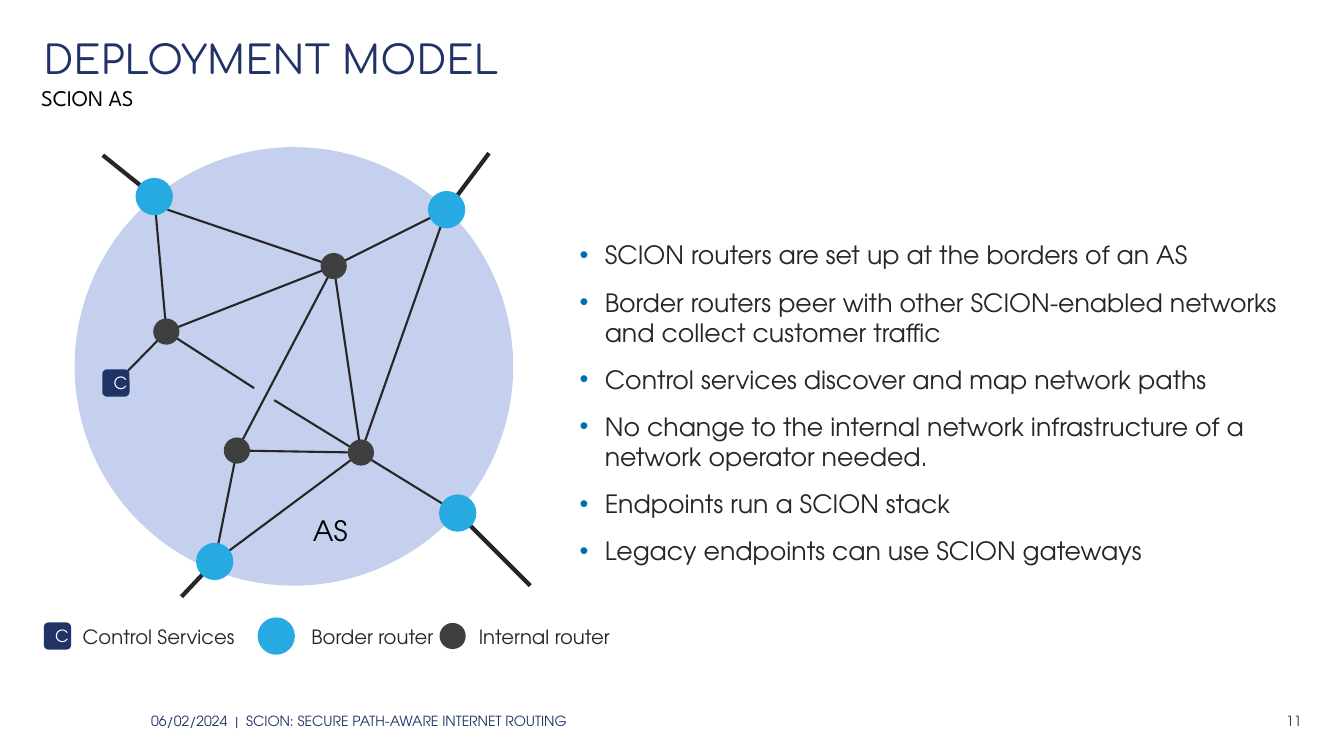
from dataclasses import dataclass

from lxml import etree
from pptx import Presentation
from pptx import util as u
from pptx.dml.color import RGBColor
from pptx.enum import shapes, text
from pptx.oxml.ns import qn


@dataclass(frozen=True)
class Theme:
    navy: str = "203367"
    sky: str = "27A9E1"
    dark: str = "3F3F3F"
    pale: str = "C4D0ED"
    ink: str = "262626"
    black: str = "000000"
    white: str = "FFFFFF"
    dot: str = "006EB7"
    body: str = "TeX Gyre Adventor"
    head: str = "Comfortaa"
    sub: str = "League Spartan"
    title: int = 28
    area: int = 20
    list: int = 18
    lead: int = 16
    key: int = 14
    mark: int = 12
    foot: int = 10


T = Theme()
ALIGN = text.PP_ALIGN
ANCHOR = text.MSO_ANCHOR
SIZES = {"border": 0.37, "inner": 0.26, "control": 0.27}

# Centres, measured from the top left corner of the network's box
NODES = {
    "left": ("inner", 0.91, 1.83),
    "top": ("inner", 2.57, 1.18),
    "low": ("inner", 1.61, 3.01),
    "right": ("inner", 2.84, 3.03),
    "nw": ("border", 0.79, 0.49),
    "ne": ("border", 3.69, 0.62),
    "se": ("border", 3.8, 3.63),
    "sw": ("border", 1.39, 4.11),
    "ctrl": ("control", 0.41, 2.34),
}
# An end is a node's name or a point
LINKS = [
    ("left", (1.78, 2.39)), ((1.98, 2.51), "se"),
    ("ne", "right"), ("ne", "top"), ("top", "left"),
    ("top", (0.92, 0.62)), ("left", "nw"), ("top", "low"),
    ("right", "low"), ("right", "sw"), ("sw", "low"),
    ("ctrl", "left"), ("top", "right"),
]
SPOKES = [
    ("nw", (0.28, 0.08)), ("ne", (4.11, 0.06)),
    ("se", (4.52, 4.35)), ("sw", (1.06, 4.46)),
]
KEYS = [
    ("control", 0.14, 0.29, "Control Services"),
    ("border", 2.31, 2.56, "Border router"),
    ("inner", 4.06, 4.22, "Internal router"),
]
POINTS = [
    "SCION routers are set up at the borders of an AS",
    "Border routers peer with other SCION-enabled networks and collect customer traffic",
    "Control services discover and map network paths",
    "No change to the internal network infrastructure of a network operator needed.",
    "Endpoints run a SCION stack",
    "Legacy endpoints can use SCION gateways",
]


def rgb(code):
    return RGBColor.from_string(code)


def style(para, size, color, face=T.body, align=ALIGN.LEFT):
    para.alignment = align
    font = para.font
    font.size, font.name = u.Pt(size), face
    font.color.rgb = rgb(color)


def inset(frame, side, top):
    frame.margin_left = frame.margin_right = u.Inches(side)
    frame.margin_top = frame.margin_bottom = u.Inches(top)


def label(slide, box, words, size, color, face=T.body, align=ALIGN.LEFT):
    frame = slide.shapes.add_textbox(*map(u.Inches, box)).text_frame
    frame.word_wrap = True
    frame.text = words
    style(frame.paragraphs[0], size, color, face, align)
    return frame


def solid(slide, kind, box, color):
    shape = slide.shapes.add_shape(kind, *map(u.Inches, box))
    shape.shadow.inherit = False
    shape.fill.solid()
    shape.fill.fore_color.rgb = rgb(color)
    shape.line.fill.background()
    return shape


def node(slide, kind, x, y):
    """Draw a router or control service centred on x, y."""
    size = SIZES[kind]
    box = (x - size / 2, y - size / 2, size, size)
    if kind != "control":
        color = T.sky if kind == "border" else T.dark
        solid(slide, shapes.MSO_SHAPE.OVAL, box, color)
        return
    shape = solid(slide, shapes.MSO_SHAPE.ROUNDED_RECTANGLE, box, T.navy)
    frame = shape.text_frame
    frame.text = "C"
    frame.vertical_anchor = ANCHOR.MIDDLE
    style(frame.paragraphs[0], T.mark, T.white, align=ALIGN.CENTER)


def link(slide, start, end, width):
    line = slide.shapes.add_connector(
        shapes.MSO_CONNECTOR.STRAIGHT, *map(u.Inches, (*start, *end)))
    line.line.color.rgb = rgb(T.ink)
    line.line.width = u.Pt(width)
    etree.SubElement(line._element.spPr, qn("a:effectLst"))


def header(slide, x, y, w):
    title = slide.shapes.title
    title.left, title.top, title.width, title.height = map(u.Inches, (x, y, w, 0.39))
    frame = title.text_frame
    frame.text = "DEPLOYMENT MODEL"
    frame.auto_size = text.MSO_AUTO_SIZE.NONE
    frame.vertical_anchor = ANCHOR.TOP
    inset(frame, 0, 0)
    para = frame.paragraphs[0]
    para.line_spacing = 0.9
    style(para, T.title, T.navy, T.head)
    label(slide, (x - 0.12, y + 0.39, 6.67, 0.37), "SCION AS", T.lead, T.black, T.sub)


def network(slide, x, y, size):
    def place(end):
        dx, dy = NODES[end][1:] if isinstance(end, str) else end
        return x + dx, y + dy

    solid(slide, shapes.MSO_SHAPE.OVAL, (x, y, size, size), T.pale)
    for ends, width in ((LINKS, 1.5), (SPOKES, 3)):
        for start, end in ends:
            link(slide, place(start), place(end), width)
    for name, (kind, *_) in NODES.items():
        node(slide, kind, *place(name))
    label(slide, (x + 2.21, y + 3.59, 0.65, 0.44), "AS", T.area, T.black,
          align=ALIGN.CENTER)


def legend(slide, x, y):
    for kind, mid, left, words in KEYS:
        node(slide, kind, x + mid, y + 0.16)
        label(slide, (x + left, y, 1.72, 0.34), words, T.key, T.ink)


def bullets(slide, x, y, w, h):
    frame = label(slide, (x, y, w, h), "\n".join(POINTS), T.list, T.ink)
    for i, para in enumerate(frame.paragraphs):
        props = para._p.get_or_add_pPr()
        props.set("marL", str(u.Inches(0.25)))
        props.set("indent", str(-u.Inches(0.25)))
        color = etree.SubElement(props, qn("a:buClr"))
        etree.SubElement(color, qn("a:srgbClr"), val=T.dot)
        etree.SubElement(props, qn("a:buFont"), typeface="Arial")
        etree.SubElement(props, qn("a:buChar"), char="•")
        if i:
            para.space_before = u.Pt(12)
        style(para, T.list, T.ink)


def footer(slide, x, y, right):
    note = "06/02/2024  |  SCION: SECURE PATH-AWARE INTERNET ROUTING"
    for box, words, align in (
        ((x, y, 4.5, 0.4), note, ALIGN.LEFT),
        ((right - 3, y, 3, 0.4), "11", ALIGN.RIGHT),
    ):
        frame = label(slide, box, words, T.foot, T.navy, align=align)
        frame.vertical_anchor = ANCHOR.MIDDLE
        inset(frame, 0, 0)


def main():
    deck = Presentation()
    deck.slide_width, deck.slide_height = u.Inches(13.33), u.Inches(7.5)
    slide = deck.slides.add_slide(deck.slide_layouts[5])
    header(slide, 0.43, 0.4, 12.48)
    network(slide, 0.74, 1.46, 4.35)
    legend(slide, 0.43, 6.15)
    bullets(slide, 5.65, 2.33, 7.3, 3.37)
    footer(slide, 1.5, 6.95, 12.91)
    deck.save("out.pptx")


if __name__ == "__main__":
    main()
